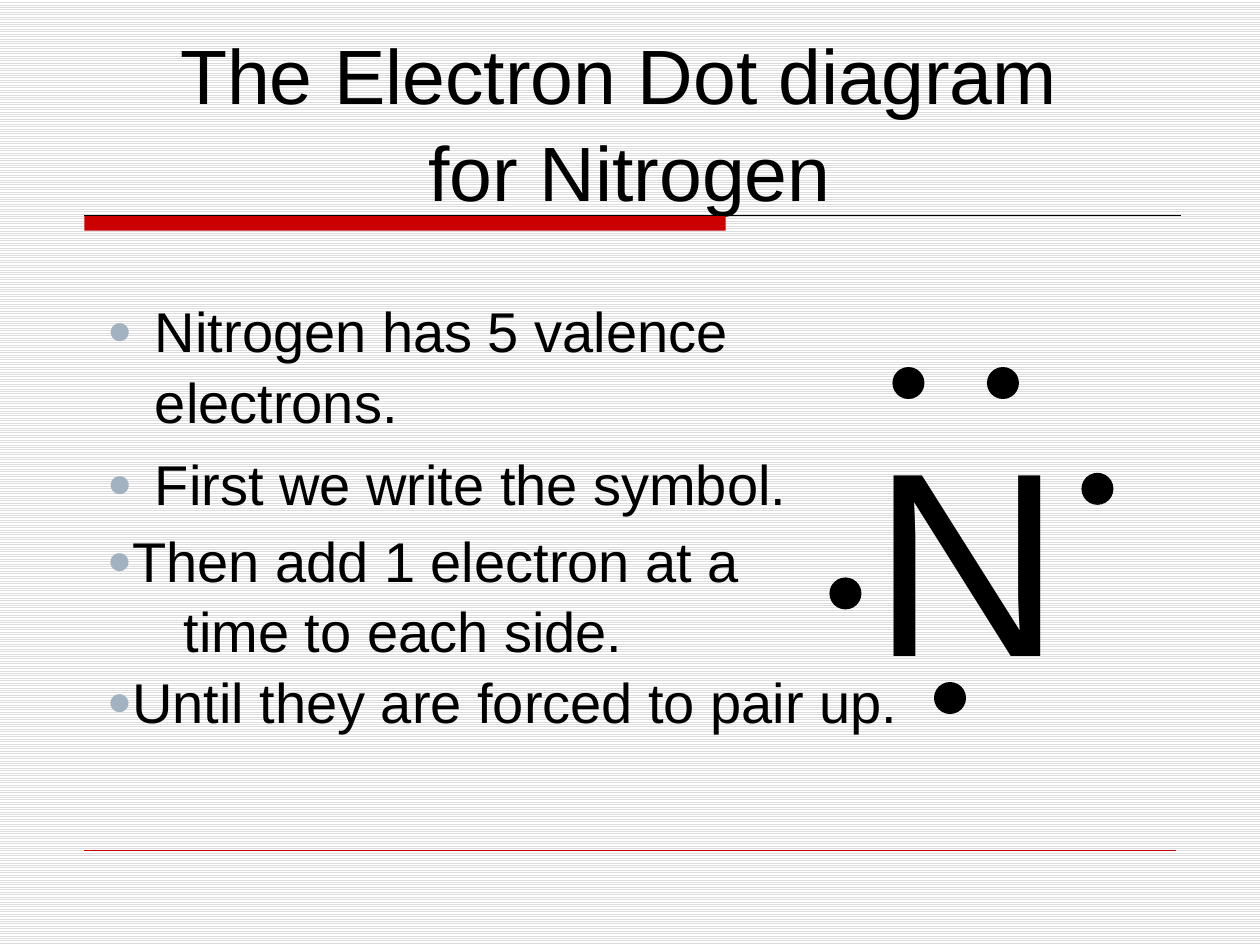
from dataclasses import dataclass

from lxml.etree import SubElement
from pptx import Presentation
from pptx.dml.color import RGBColor
from pptx.enum.dml import MSO_PATTERN
from pptx.enum.shapes import MSO_CONNECTOR, MSO_SHAPE
from pptx.enum.text import MSO_ANCHOR, MSO_AUTO_SIZE, PP_ALIGN
from pptx.oxml.ns import qn
from pptx.util import Inches, Pt

BLACK = "000000"
RED = "CC0000"
BULLET = "A3B2C1"


@dataclass(frozen=True)
class Line:
    text: str
    bullet: bool = False
    margin: float = 0
    indent: float = 0
    before: float = 0


@dataclass(frozen=True)
class Electron:
    left: float
    top: float


@dataclass(frozen=True)
class Rule:
    top: float
    right: float
    color: str
    weight: float


def rgb(color: str) -> RGBColor:
    return RGBColor.from_string(color)


def apply_format(target, values: dict) -> None:
    for attribute, value in values.items():
        setattr(target, attribute, value)


def place(shape, left: float, top: float, width: float, height: float) -> None:
    apply_format(shape, {"left": Inches(left), "top": Inches(top),
                         "width": Inches(width), "height": Inches(height)})


def set_bullet(paragraph, line: Line) -> None:
    properties = paragraph._p.get_or_add_pPr()
    properties.set("marL", str(Inches(line.margin)))
    properties.set("indent", str(Inches(line.indent)))
    if not line.bullet:
        SubElement(properties, qn("a:buNone"))
        return
    color = SubElement(properties, qn("a:buClr"))
    SubElement(color, qn("a:srgbClr"), val=BULLET)
    SubElement(properties, qn("a:buSzPct"), val="75000")
    SubElement(properties, qn("a:buFont"), typeface="Arial")
    SubElement(properties, qn("a:buChar"), char="●")


def write(shape, lines: list[Line], size: float, frame_format: dict,
          spacing: float = 1.05, align=PP_ALIGN.LEFT) -> None:
    frame = shape.text_frame
    apply_format(frame, {"word_wrap": True, "auto_size": MSO_AUTO_SIZE.NONE,
                         "vertical_anchor": MSO_ANCHOR.TOP,
                         "margin_left": Inches(0.1), "margin_right": Inches(0.1),
                         "margin_top": Inches(0.05), "margin_bottom": Inches(0.05),
                         **frame_format})
    for index, line in enumerate(lines):
        paragraph = frame.add_paragraph() if index else frame.paragraphs[0]
        apply_format(paragraph, {"alignment": align, "line_spacing": spacing,
                                 "space_before": Pt(line.before)})
        set_bullet(paragraph, line)
        run = paragraph.add_run()
        run.text = line.text
        apply_format(run.font, {"name": "Arial", "size": Pt(size)})
        run.font.color.rgb = rgb(BLACK)


def add_text(slide, box: tuple, lines: list[Line], size: float,
             frame_format: dict, spacing: float = 1.05) -> None:
    write(slide.shapes.add_textbox(*map(Inches, box)), lines, size, frame_format, spacing)


def add_rule(slide, rule: Rule) -> None:
    connector = slide.shapes.add_connector(
        MSO_CONNECTOR.STRAIGHT, Inches(0.67), Inches(rule.top),
        Inches(rule.right), Inches(rule.top))
    connector.line.color.rgb = rgb(rule.color)
    connector.line.width = Pt(rule.weight)
    SubElement(connector._element.spPr, qn("a:effectLst"))


def add_solid(slide, preset, box: tuple, color: str):
    solid = slide.shapes.add_shape(preset, *map(Inches, box))
    solid.shadow.inherit = False
    solid.fill.solid()
    solid.fill.fore_color.rgb = rgb(color)
    solid.line.fill.background()
    return solid


def add_electron(slide, electron: Electron) -> None:
    dot = add_solid(slide, MSO_SHAPE.OVAL,
                    (electron.left, electron.top, 0.24, 0.24), BLACK)
    dot.line.color.rgb = rgb(BLACK)
    dot.line.width = Pt(1)


def main() -> None:
    deck = Presentation()
    apply_format(deck, {"slide_width": Inches(10), "slide_height": Inches(7.5)})
    slide = deck.slides.add_slide(deck.slide_layouts[1])

    backdrop = slide.background.fill
    backdrop.patterned()
    backdrop.pattern = MSO_PATTERN.LIGHT_HORIZONTAL
    backdrop.fore_color.rgb = rgb("DDDDDD")
    backdrop.back_color.rgb = rgb("FFFFFF")

    add_solid(slide, MSO_SHAPE.RECTANGLE, (0.67, 1.71, 5.09, 0.12), RED)
    for rule in (Rule(1.71, 9.37, BLACK, 0.75), Rule(6.75, 9.33, RED, 0.25)):
        add_rule(slide, rule)

    title = slide.shapes.title
    place(title, 0.75, 0.17, 8.5, 1.57)
    write(title, [Line("The Electron Dot diagram "), Line("for Nitrogen")], 44,
          {"vertical_anchor": MSO_ANCHOR.MIDDLE}, 1.04, PP_ALIGN.CENTER)

    facts = slide.placeholders[1]
    place(facts, 0.75, 2.25, 5.67, 2)
    hanging = {"bullet": True, "margin": 0.38, "indent": -0.38, "before": 6.4}
    write(facts, [Line("Nitrogen has 5 valence electrons.", **hanging),
                  Line("First we write the symbol.", **hanging)], 32,
          {"margin_top": Inches(0.08)})

    add_text(slide, (6.83, 3.08, 1.92, 2.6), [Line("N")], 150,
             {"vertical_anchor": MSO_ANCHOR.BOTTOM}, 1.0)
    add_text(slide, (0.75, 4.07, 5.5, 1.17),
             [Line("Then add 1 electron at a", bullet=True),
              Line("time to each side.", margin=0.61)], 32,
             {"margin_top": Inches(0.08)})
    add_text(slide, (0.75, 5.22, 6.53, 0.63),
             [Line("Until they are forced to pair up.", bullet=True)], 32,
             {"word_wrap": False})

    for electron in (Electron(7.09, 2.92), Electron(7.84, 2.92), Electron(8.59, 3.76),
                     Electron(7.42, 5.42), Electron(6.59, 4.59)):
        add_electron(slide, electron)

    deck.save("out.pptx")


if __name__ == "__main__":
    main()
